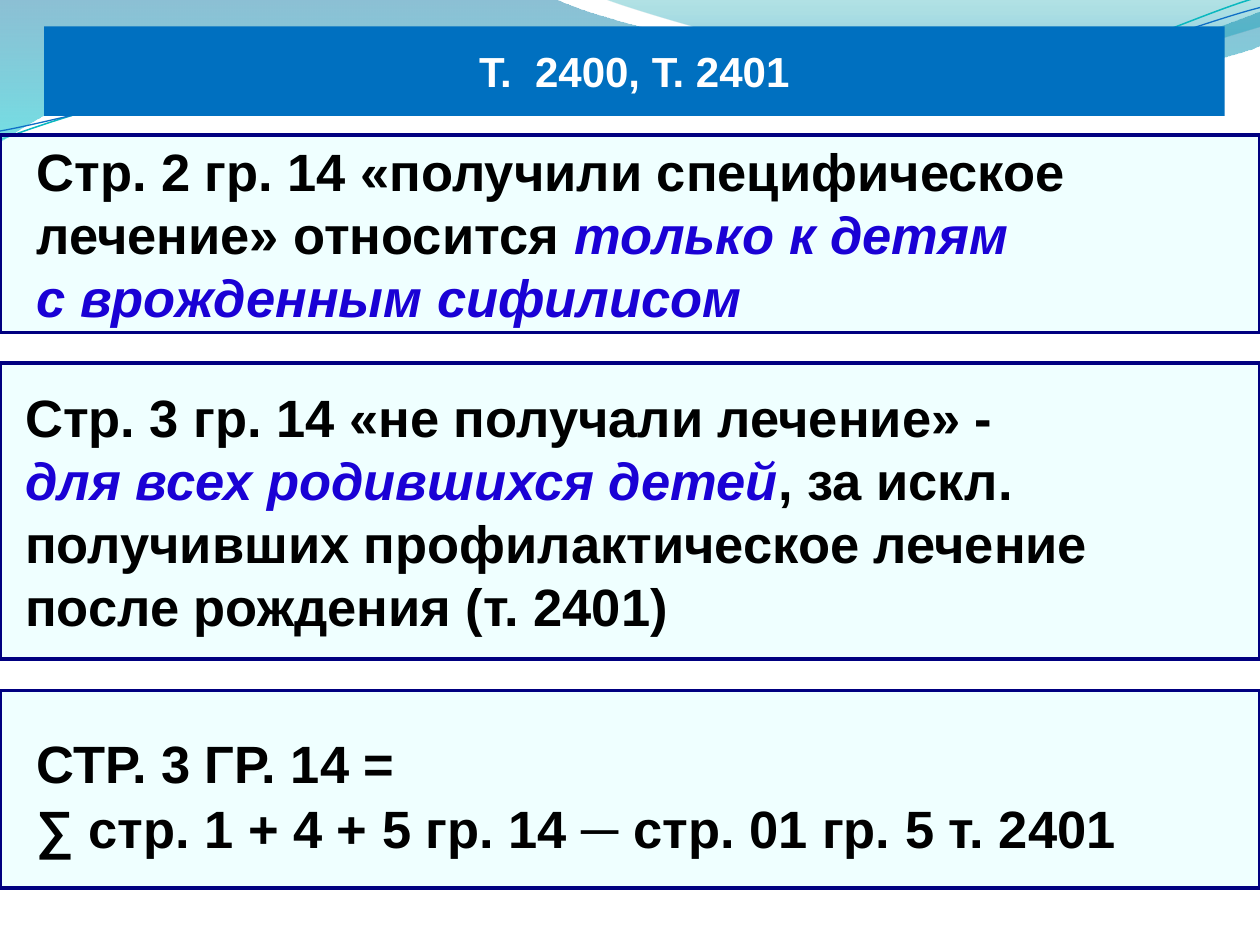
from lxml import etree
from pptx import Presentation
from pptx.dml.color import RGBColor
from pptx.enum.shapes import MSO_SHAPE
from pptx.enum.text import MSO_ANCHOR, MSO_AUTO_SIZE, PP_ALIGN
from pptx.oxml.ns import qn
from pptx.util import Inches, Pt

RECT = MSO_SHAPE.RECTANGLE
MIDDLE = MSO_ANCHOR.MIDDLE
CENTER, LEFT = PP_ALIGN.CENTER, PP_ALIGN.LEFT
NO_FIT = MSO_AUTO_SIZE.NONE

THEME = {
    "font": "Arial", "title_size": 24, "body_size": 30, "gap_size": 36,
    "banner": RGBColor.from_string("0070C0"),
    "title": RGBColor.from_string("FFFFFF"),
    "text": RGBColor.from_string("000000"),
    "accent": RGBColor.from_string("1A01D5"),
    "panel": RGBColor.from_string("CCFFFF"),
    "border": RGBColor.from_string("000080"),
    "wave_blue": RGBColor.from_string("0074A1"),
    "wave_cyan": RGBColor.from_string("00C6CF"),
    "crest_teal": RGBColor.from_string("00A1A9"),
    "crest_blue": RGBColor.from_string("008BBF"),
    "line_teal": RGBColor.from_string("0AB8BF"),
    "line_blue": RGBColor.from_string("0F6FC6"),
}


def set_opacity(sp, percents):
    """Give the fill colours of a shape their opacity, in order."""
    fill = next(e for e in sp.element.spPr if e.tag in (qn("a:solidFill"), qn("a:gradFill")))
    for node, percent in zip(fill.iter(qn("a:srgbClr")), percents):
        etree.SubElement(node, qn("a:alpha"), val=str(percent * 1000))


def add_wave(start, segments, close):
    """Draw on the master; a segment holds one point (straight) or three (curve)."""
    points = [(Inches(x), Inches(y)) for seg in segments for x, y in seg]
    builder = s.shapes.build_freeform(Inches(start[0]), Inches(start[1]))
    builder.add_line_segments(points, close=close)
    sp = builder.convert_to_shape()
    sp.shadow.inherit = False
    outline = next(sp.element.iter(qn("a:path")))
    lines = iter(outline.findall(qn("a:lnTo")))
    for seg in segments:
        nodes = [next(lines) for _ in seg]
        if len(seg) == 3:
            curve = etree.Element(qn("a:cubicBezTo"))
            outline.replace(nodes[0], curve)
            for node in nodes:
                curve.append(node[0])
            for node in nodes[1:]:
                outline.remove(node)
    master = prs.slide_master.shapes
    sp.element.nvSpPr.cNvPr.set("id", str(20 + len(master)))
    master.element.append(sp.element)
    return sp


prs = Presentation()
prs.slide_width, prs.slide_height = Inches(10), Inches(7.5)
s = prs.slides.add_slide(prs.slide_layouts[5])

# Gradient waves at the top: start, segments, colors, opacities, end position
waves = [
    ((0, -0.01),
     [[(4.4, -0.01)],
      [(4.76, 0.17), (6.64, 0.63), (7.58, 0.63)],
      [(8.53, 0.63), (9.58, 0.26), (10, 0.09)],
      [(10.01, 0.36)],
      [(9.83, 0.44), (8.7, 0.76), (7.46, 0.75)],
      [(6.22, 0.75), (3.82, 0.28), (2.57, 0.34)],
      [(1.29, 0.35), (0.46, 0.83), (-0.01, 1.13)],
      [(0, -0.01)]],
     ("wave_blue", "wave_cyan"), (45, 55), 1),
    ((4.79, -0.01),
     [[(5.09, 0.11), (6.82, 0.62), (7.69, 0.65)],
      [(8.56, 0.69), (9.61, 0.32), (10, 0.21)],
      [(10, 0)],
      [(4.79, -0.01)]],
     ("crest_teal", "crest_blue"), (30, 45), 0.8),
]
for start, segments, colors, opacities, end in waves:
    sp = add_wave(start, segments, True)
    sp.line.fill.background()
    sp.fill.gradient()
    sp.fill.gradient_angle = 270
    for stop, color, position in zip(sp.fill.gradient_stops, colors, (0, end)):
        stop.position = position
        stop.color.rgb = THEME[color]
    for node in sp.element.spPr.iter(qn("a:srgbClr")):
        for child in list(node):
            node.remove(child)
    set_opacity(sp, opacities)

# Thin wave lines
wave_lines = [
    ((0, 1.11),
     [[(0.48, 0.93), (1.58, 0.57), (2.77, 0.52)],
      [(3.95, 0.47), (5.93, 0.89), (7.13, 0.8)],
      [(8.33, 0.71), (9.38, 0.15), (9.98, -0.02)]], "line_teal", 0.85),
    ((0, 1.04),
     [[(0.47, 0.96), (1.64, 0.61), (2.83, 0.56)],
      [(4.03, 0.51), (5.97, 0.83), (7.17, 0.75)],
      [(8.36, 0.67), (9.41, 0.21), (10, 0.06)]], "line_blue", 0.75),
]
for start, segments, color, width in wave_lines:
    sp = add_wave(start, segments, False)
    sp.fill.background()
    sp.line.color.rgb = THEME[color]
    sp.line.width = Pt(width)

# Title banner
title = s.shapes.title
title.left, title.top = Inches(0.35), Inches(0.21)
title.width, title.height = Inches(9.37), Inches(0.71)
title.fill.solid()
title.fill.fore_color.rgb = THEME["banner"]
tf = title.text_frame
tf.text = "Т.  2400, Т. 2401"
tf.auto_size, tf.vertical_anchor = NO_FIT, MIDDLE
p = tf.paragraphs[0]
p.alignment = CENTER
font = p.runs[0].font
font.name, font.size, font.bold = THEME["font"], Pt(THEME["title_size"]), True
font.color.rgb = THEME["title"]

# Text panels: top, height, left margin, lines of (text, color, size) runs
panels = [
    (2.88, 2.35, 0.2, [
        [("Стр. 3 гр. 14 «не получали лечение» - ", "text", "body_size")],
        [("для всех родившихся детей", "accent", "body_size"),
         (", за искл. получивших профилактическое лечение ", "text", "body_size")],
        [("после рождения (т. 2401)", "text", "body_size")]]),
    (1.07, 1.57, 0.29, [
        [("Стр. 2 гр. 14 «получили специфическое лечение» относится ", "text", "body_size"),
         ("только к детям ", "accent", "body_size")],
        [("с врожденным сифилисом", "accent", "body_size")]]),
    (5.48, 1.57, 0.29, [
        [("СТР. 3 ГР. 14 =", "text", "body_size"), (" ", "text", "gap_size")],
        [("∑ стр. 1 + 4 + 5 гр. 14 ─ стр. 01 гр. 5 т. 2401", "text", "body_size")]]),
]
for top, height, margin, lines in panels:
    sp = s.shapes.add_shape(RECT, 0, Inches(top), Inches(10), Inches(height))
    sp.shadow.inherit = False
    sp.fill.solid()
    sp.fill.fore_color.rgb = THEME["panel"]
    set_opacity(sp, [30])
    sp.line.color.rgb = THEME["border"]
    sp.line.width = Pt(2)
    tf = sp.text_frame
    tf.word_wrap, tf.vertical_anchor = True, MIDDLE
    tf.margin_left = Inches(margin)
    p = tf.paragraphs[0]
    p.alignment = LEFT
    for i, line in enumerate(lines):
        if i:
            p.add_line_break()
        for text, color, size in line:
            r = p.add_run()
            r.text = text
            r.font.name, r.font.size, r.font.bold = THEME["font"], Pt(THEME[size]), True
            r.font.italic = color == "accent"
            r.font.color.rgb = THEME[color]

prs.save("out.pptx")
